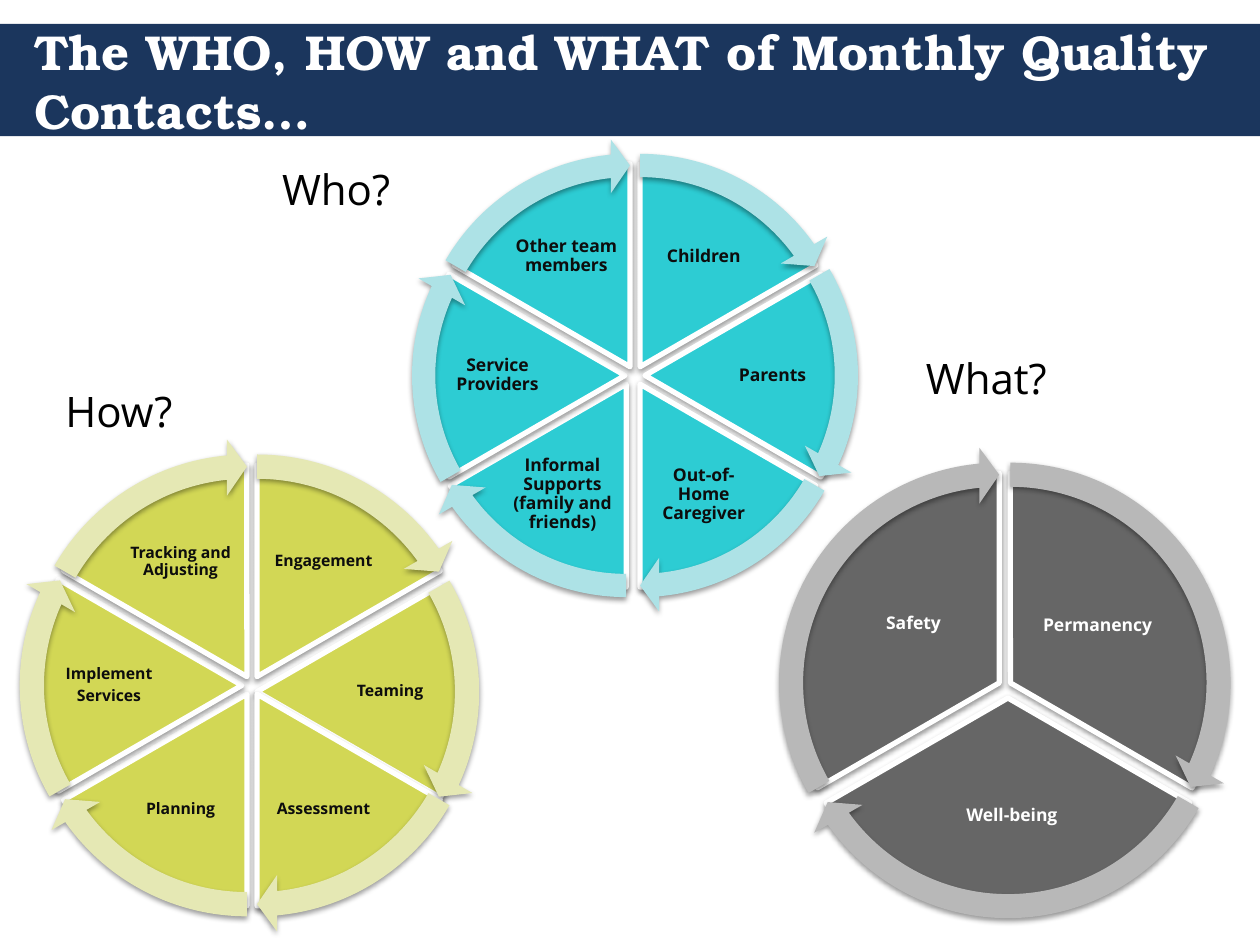
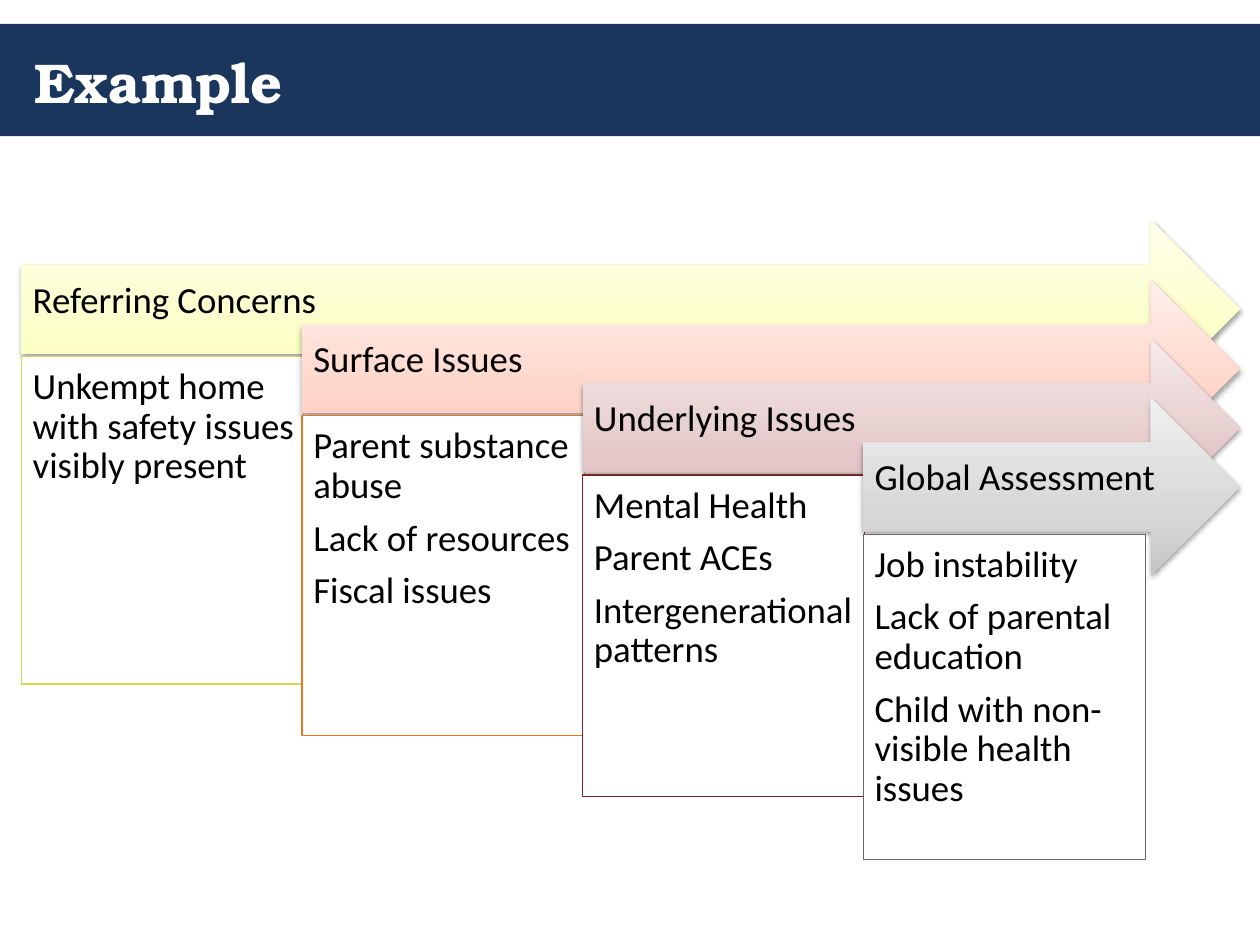
from copy import deepcopy
from dataclasses import dataclass
from math import cos, radians, sin

from lxml.etree import SubElement
from pptx import Presentation
from pptx.dml.color import RGBColor
from pptx.enum.shapes import MSO_SHAPE as Shape
from pptx.enum.text import MSO_ANCHOR as Anchor, MSO_AUTO_SIZE as AutoSize, PP_ALIGN as Align
from pptx.oxml.ns import qn
from pptx.util import Inches, Pt


@dataclass(frozen=True)
class Theme:
    navy: str = "1B365D"
    white: str = "FFFFFF"
    black: str = "000000"
    ink: str = "0D0D0D"
    lime: str = "D2D755"
    pale_lime: str = "E5E8B4"
    aqua: str = "2DCCD3"
    pale_aqua: str = "ADE2E6"
    gray: str = "666666"
    pale_gray: str = "B8B8B8"
    orange: str = "E87722"
    maroon: str = "7C2529"
    title_font: str = "TeX Gyre Bonum"
    label_font: str = "Open Sans"
    body_font: str = "Calibri"
    long_title: float = 28
    short_title: float = 32
    heading: float = 24
    body: float = 21
    label: float = 10
    small_label: float = 9


T = Theme()
FULL_TURN = 216
ARROW_HEAD = 3.275
SLICE_GAP = 0.08


@dataclass(frozen=True)
class Slice:
    text: str
    nudge: tuple[float, float] = (0, 0)
    label_shift: tuple[float, float] = (0, 0)


@dataclass(frozen=True)
class Wheel:
    center: tuple[float, float]
    diameter: float
    fill: str
    ring: str
    ink: str
    size: float
    label_radius: float
    label_width: float
    slices: tuple[Slice, ...]


@dataclass(frozen=True)
class Heading:
    text: str
    left: float
    top: float


@dataclass(frozen=True)
class Stage:
    name: str
    gradient: tuple[str, str, str]
    border: str
    box_height: float
    issues: tuple[str, ...]


WHEELS = (
    Wheel((2.0, 5.44), 3.36, T.lime, T.pale_lime, T.ink, T.small_label, 0.314, 0.26, (
        Slice("Engagement"),
        Slice("Teaming", nudge=(-0.04, 0.05)),
        Slice("Assessment"),
        Slice("Planning"),
        Slice("Implement\nServices"),
        Slice("Tracking and Adjusting"))),
    Wheel((5.04, 2.98), 3.22, T.aqua, T.pale_aqua, T.ink, T.label, 0.314, 0.26, (
        Slice("Children"),
        Slice("Parents"),
        Slice("Out-of-Home Caregiver"),
        Slice("Informal Supports (family and friends)", nudge=(-0.03, 0)),
        Slice("Service Providers"),
        Slice("Other team members"))),
    Wheel((8.0, 5.46), 3.33, T.gray, T.pale_gray, T.white, T.label, 0.25, 0.36, (
        Slice("Permanency", nudge=(-0.05, 0), label_shift=(-0.03, -0.04)),
        Slice("Well-being", label_shift=(0.03, 0.1)),
        Slice("Safety", label_shift=(0.04, -0.05)))),
)

HEADINGS = (
    Heading("How?", 0.42, 3.01),
    Heading("What?", 7.25, 2.75),
    Heading("Who?", 2.14, 1.25),
)

STAGES = (
    Stage("Referring Concerns", ("FBFFB0", "FCFFC7", "FEFFEA"), T.lime, 2.6,
          ("Unkempt home with safety issues visibly present",)),
    Stage("Surface Issues", ("FFC4B2", "FFD5C9", "FFEFEB"), T.orange, 2.54,
          ("Parent substance abuse", "Lack of resources", "Fiscal issues")),
    Stage("Underlying Issues", ("D9B0B0", "E4C8C9", "F5EAEA"), T.maroon, 2.55,
          ("Mental Health", "Parent ACEs", "Intergenerational patterns")),
    Stage("Global Assessment", ("C6C6C6", "D7D7D7", "F0F0F0"), T.gray, 2.58,
          ("Job instability", "Lack of parental education",
           "Child with non-visible health issues")),
)


def rgb(color: str) -> RGBColor:
    return RGBColor.from_string(color)


def set_font(p, name: str, size: float, color: str, bold: bool = False) -> None:
    p.font.name, p.font.size, p.font.bold = name, Pt(size), bold
    p.font.color.rgb = rgb(color)


def write(tf, text: str, name: str, size: float, color: str, bold: bool = False,
          align=Align.LEFT, anchor=Anchor.TOP, margins=(0.09, 0.09, 0.07, 0.09)) -> None:
    tf.text = text
    tf.word_wrap = True
    tf.vertical_anchor = anchor
    tf.margin_left, tf.margin_top, tf.margin_right, tf.margin_bottom = map(Inches, margins)
    for p in tf.paragraphs:
        p.alignment = align
        p.line_spacing = 0.9
        p.space_after = Pt(size * 0.35)
        set_font(p, name, size, color, bold)


def add_shape(s, kind, left: float, top: float, width: float, height: float,
              fill: str | None = None, line: str | None = None, weight: float = 0.75):
    sp = s.shapes.add_shape(kind, *map(Inches, (left, top, width, height)))
    sp.shadow.inherit = False
    if fill:
        sp.fill.solid()
        sp.fill.fore_color.rgb = rgb(fill)
    if line:
        sp.line.color.rgb = rgb(line)
        sp.line.width = Pt(weight)
    else:
        sp.line.fill.background()
    return sp


def add_shadow(sp) -> None:
    effects = sp._element.spPr.find(qn("a:effectLst"))
    shadow = SubElement(effects, qn("a:outerShdw"), blurRad=str(Pt(3.1)),
                        dist=str(Pt(1.6)), dir="5400000", rotWithShape="0")
    color = SubElement(shadow, qn("a:srgbClr"), val=T.black)
    SubElement(color, qn("a:alpha"), val="38000")


def fill_gradient(sp, colors: tuple[str, str, str]) -> None:
    sp.fill.gradient()
    sp.fill.gradient_angle = 90
    stops = sp._element.spPr.find(".//" + qn("a:gsLst"))
    stops.insert(1, deepcopy(stops[0]))
    for stop, position, color in zip(sp.fill.gradient_stops, (0, 0.35, 1), colors):
        stop.position = position
        stop.color.rgb = rgb(color)


def set_adjustments(sp, *values: float) -> None:
    for i, value in enumerate(values):
        sp.adjustments[i] = value


def add_band(s, master) -> None:
    band = add_shape(s, Shape.RECTANGLE, 0, 0.19, 10, 0.89, T.navy)
    master.shapes._spTree.insert(2, band._element)


def add_titled_slide(prs, title: str, size: float):
    s = prs.slides.add_slide(prs.slide_layouts[5])
    sp = s.shapes.title
    sp.left, sp.top, sp.width, sp.height = map(Inches, (0.17, 0.19, 9.67, 0.9))
    tf = sp.text_frame
    tf.text = title
    tf.auto_size = AutoSize.NONE
    tf.vertical_anchor = Anchor.MIDDLE
    p = tf.paragraphs[0]
    p.alignment = Align.LEFT
    set_font(p, T.title_font, size, T.white, bold=True)
    return s


def polar(radius: float, angle: float) -> tuple[float, float]:
    return radius * sin(radians(angle)), -radius * cos(radians(angle))


def add_wheel(s, wheel: Wheel) -> None:
    d = wheel.diameter
    ring = d * 1.125
    label_w, label_h = d * wheel.label_width, d * 0.2
    count = len(wheel.slices)
    sweep = FULL_TURN / count
    arcs = []
    for i, part in enumerate(wheel.slices):
        angle = (i + 0.5) * 360 / count
        dx, dy = polar(SLICE_GAP, angle)
        x = wheel.center[0] + dx + part.nudge[0]
        y = wheel.center[1] + dy + part.nudge[1]
        start = (FULL_TURN * 0.75 + i * sweep) % FULL_TURN
        end = (start + sweep) % FULL_TURN
        arcs.append((x, y, start, end))

        pie = add_shape(s, Shape.PIE, x - d / 2, y - d / 2, d, d, wheel.fill, T.white, 3)
        set_adjustments(pie, start, end)
        add_shadow(pie)

        dx, dy = polar(d * wheel.label_radius, angle)
        label = s.shapes.add_textbox(
            Inches(x + dx + part.label_shift[0] - label_w / 2),
            Inches(y + dy + part.label_shift[1] - label_h / 2),
            Inches(label_w), Inches(label_h))
        write(label.text_frame, part.text, T.label_font, wheel.size, wheel.ink, True,
              Align.CENTER, Anchor.MIDDLE, (0.01,) * 4)

    for x, y, start, end in arcs:
        arrow = add_shape(s, Shape.CIRCULAR_ARROW, x - ring / 2, y - ring / 2,
                          ring, ring, wheel.ring)
        set_adjustments(arrow, 0.051, ARROW_HEAD, end - ARROW_HEAD, start, 0.059)
        add_shadow(arrow)


def add_heading(s, heading: Heading) -> None:
    sp = s.shapes.add_textbox(*map(Inches, (heading.left, heading.top, 1.42, 0.5)))
    tf = sp.text_frame
    tf.word_wrap = True
    tf.text = heading.text
    set_font(tf.paragraphs[0], T.label_font, T.heading, T.black)


def add_stage(s, index: int, stage: Stage) -> None:
    left, top = 0.17 + index * 2.227, 1.75 + index * 0.47
    arrow = add_shape(s, Shape.RIGHT_ARROW, left, top, 9.84 - left, 1.41)
    fill_gradient(arrow, stage.gradient)
    add_shadow(arrow)
    write(arrow.text_frame, stage.name, T.body_font, T.body, T.black,
          anchor=Anchor.MIDDLE, margins=(0.09, 0.09, 0.28, 0.22))
    box = add_shape(s, Shape.RECTANGLE, left, top + 1.08, 2.24, stage.box_height,
                    T.white, stage.border)
    write(box.text_frame, "\n".join(stage.issues), T.body_font, T.body, T.black)


def main() -> None:
    prs = Presentation()
    prs.slide_width, prs.slide_height = Inches(10), Inches(7.5)

    s = add_titled_slide(prs, "The WHO, HOW and WHAT of Monthly Quality Contacts…", T.long_title)
    add_band(s, prs.slide_master)
    for wheel in WHEELS:
        add_wheel(s, wheel)
    for heading in HEADINGS:
        add_heading(s, heading)

    s = add_titled_slide(prs, "Example", T.short_title)
    for i, stage in enumerate(STAGES):
        add_stage(s, i, stage)

    prs.save("out.pptx")


if __name__ == "__main__":
    main()
